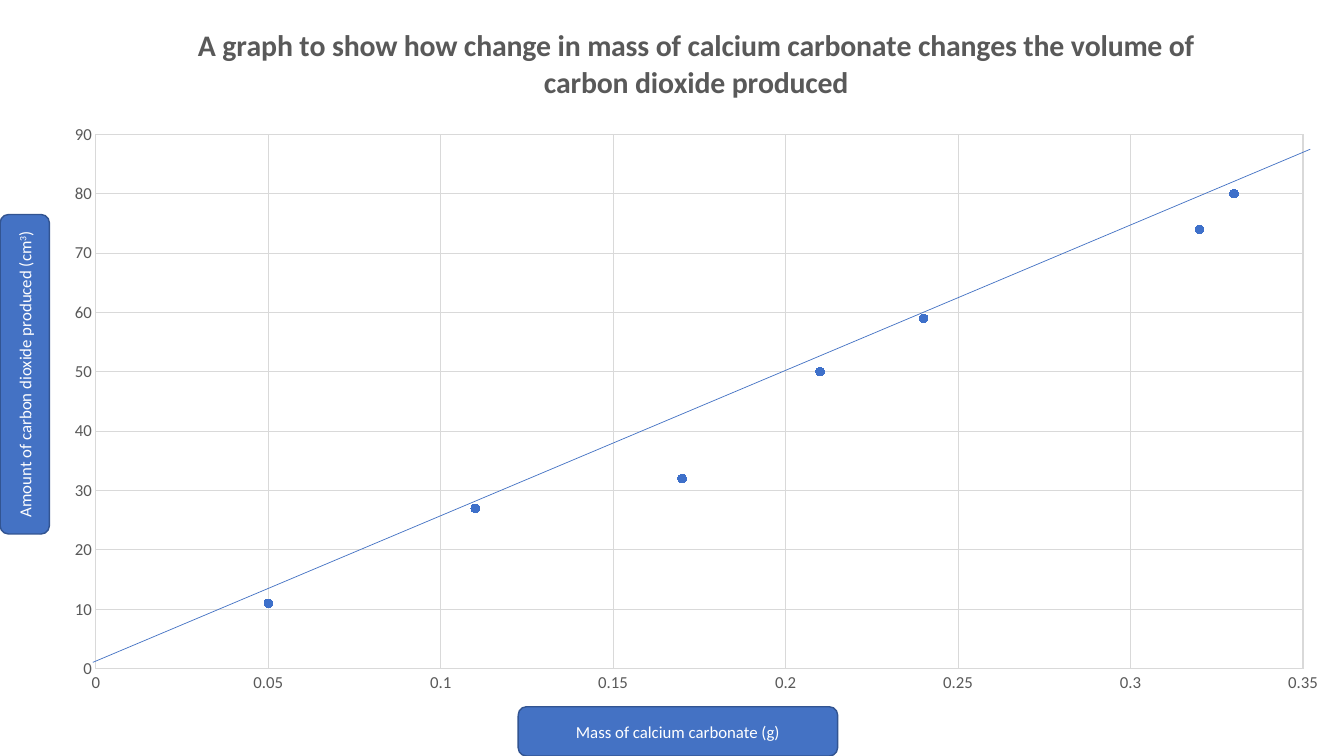
from dataclasses import dataclass

from lxml.etree import SubElement
from pptx import Presentation
from pptx.chart.axis import ValueAxis
from pptx.chart.chart import Chart
from pptx.chart.data import XyChartData
from pptx.dml.color import RGBColor
from pptx.enum.chart import XL_CHART_TYPE, XL_MARKER_STYLE, XL_TICK_MARK
from pptx.enum.shapes import MSO_CONNECTOR, MSO_SHAPE
from pptx.enum.text import MSO_ANCHOR, PP_ALIGN
from pptx.oxml.ns import qn
from pptx.slide import Slide
from pptx.text.text import Font
from pptx.util import Cm, Pt

FONT = "Calibri"
BLUE, DARK_BLUE, MARKER_BLUE = "4472C4", "325491", "3E70CA"
GREY, GRID_GREY, WHITE = "595959", "D9D9D9", "FFFFFF"
TITLE = ("A graph to show how change in mass of calcium carbonate "
         "changes the volume of carbon dioxide produced")
READINGS = [(0.05, 11), (0.11, 27), (0.17, 32), (0.21, 50),
            (0.24, 59), (0.32, 74), (0.33, 80)]


@dataclass
class AxisLabel:
    left: float
    top: float
    text: str
    superscript: str = ""
    ending: str = ""
    rotation: int = 0


@dataclass
class AxisScale:
    maximum: float
    step: float


AXIS_LABELS = [
    AxisLabel(-3.4, 8.81, "Amount of carbon dioxide produced (cm", "3", ")", 270),
    AxisLabel(13.06, 17.81, "Mass of calcium carbonate (g)"),
]


def color(hex_code: str) -> RGBColor:
    return RGBColor.from_string(hex_code)


def style_font(font: Font, size: float, hex_code: str, bold: bool = False) -> None:
    font.name, font.size, font.bold = FONT, Pt(size), bold
    font.color.rgb = color(hex_code)


def style_axis(axis: ValueAxis, scale: AxisScale) -> None:
    axis.minimum_scale, axis.maximum_scale = 0, scale.maximum
    axis.major_unit = scale.step
    axis.major_tick_mark = axis.minor_tick_mark = XL_TICK_MARK.NONE
    axis.has_major_gridlines = True
    grid = axis.major_gridlines.format.line
    grid.color.rgb, grid.width = color(GRID_GREY), Pt(0.75)
    axis.format.line.fill.background()
    axis.tick_labels.number_format = "General"
    axis.tick_labels.number_format_is_linked = False
    style_font(axis.tick_labels.font, 12, GREY)


def place_plot(chart: Chart, x: float, y: float, w: float, h: float) -> None:
    """Fix the inner plot area, in fractions of the chart."""
    plot_area = chart._chartSpace.chart.plotArea
    for old in plot_area.findall(qn("c:layout")):
        plot_area.remove(old)
    layout = SubElement(plot_area, qn("c:layout"))
    plot_area.insert(0, layout)
    manual = SubElement(layout, qn("c:manualLayout"))
    settings = {"layoutTarget": "inner", "xMode": "edge", "yMode": "edge",
                "x": x, "y": y, "w": w, "h": h}
    for name, value in settings.items():
        SubElement(manual, qn(f"c:{name}")).set("val", str(value))


def add_scatter(page: Slide) -> None:
    data = XyChartData()
    points = data.add_series("Series 1")
    for mass, volume in READINGS:
        points.add_data_point(mass, volume)
    chart = page.shapes.add_chart(XL_CHART_TYPE.XY_SCATTER, Cm(1.24), Cm(0),
                                  Cm(32.61), Cm(17.83), data).chart
    style_font(chart.font, 10, "000000")
    chart.has_legend = False
    chart.has_title = True
    para = chart.chart_title.text_frame.paragraphs[0]
    para.text = TITLE
    style_font(para.font, 21.3, GREY, bold=True)
    chart.chart_title.include_in_layout = False

    chart.plots[0].vary_by_categories = False
    series = chart.plots[0].series[0]
    series.smooth = False
    series.format.line.fill.background()
    series.marker.style, series.marker.size = XL_MARKER_STYLE.CIRCLE, 6
    series.marker.format.fill.solid()
    series.marker.format.fill.fore_color.rgb = color(MARKER_BLUE)
    series.marker.format.line.color.rgb = color(MARKER_BLUE)

    style_axis(chart.category_axis, AxisScale(0.35, 0.05))
    style_axis(chart.value_axis, AxisScale(90, 10))
    place_plot(chart, 0.036, 0.19, 0.933, 0.755)


def add_axis_label(page: Slide, label: AxisLabel) -> None:
    box = page.shapes.add_shape(MSO_SHAPE.ROUNDED_RECTANGLE, Cm(label.left),
                                Cm(label.top), Cm(8.05), Cm(1.24))
    box.rotation = label.rotation
    box.shadow.inherit = False
    box.fill.solid()
    box.fill.fore_color.rgb = color(BLUE)
    box.line.color.rgb, box.line.width = color(DARK_BLUE), Pt(1)
    frame = box.text_frame
    frame.word_wrap = True
    frame.vertical_anchor = MSO_ANCHOR.MIDDLE
    para = frame.paragraphs[0]
    para.alignment = PP_ALIGN.CENTER
    style_font(para.font, 12, WHITE)
    para.add_run().text = label.text
    if label.superscript:
        span = para.add_run()
        span.text = label.superscript
        span._r.get_or_add_rPr().set("baseline", "30000")
        para.add_run().text = label.ending


def add_best_fit_line(page: Slide) -> None:
    line = page.shapes.add_connector(MSO_CONNECTOR.STRAIGHT, Cm(2.34), Cm(16.69),
                                     Cm(33.02), Cm(3.76))
    line.line.color.rgb, line.line.width = color(BLUE), Pt(0.5)
    SubElement(line._element.spPr, qn("a:effectLst"))


def main() -> None:
    deck = Presentation()
    deck.slide_width, deck.slide_height = Cm(33.87), Cm(19.05)
    page = deck.slides.add_slide(deck.slide_layouts[6])

    # Chart of the readings
    add_scatter(page)

    # Axis labels
    for label in AXIS_LABELS:
        add_axis_label(page, label)

    # Line of best fit
    add_best_fit_line(page)

    deck.save("out.pptx")


if __name__ == "__main__":
    main()
